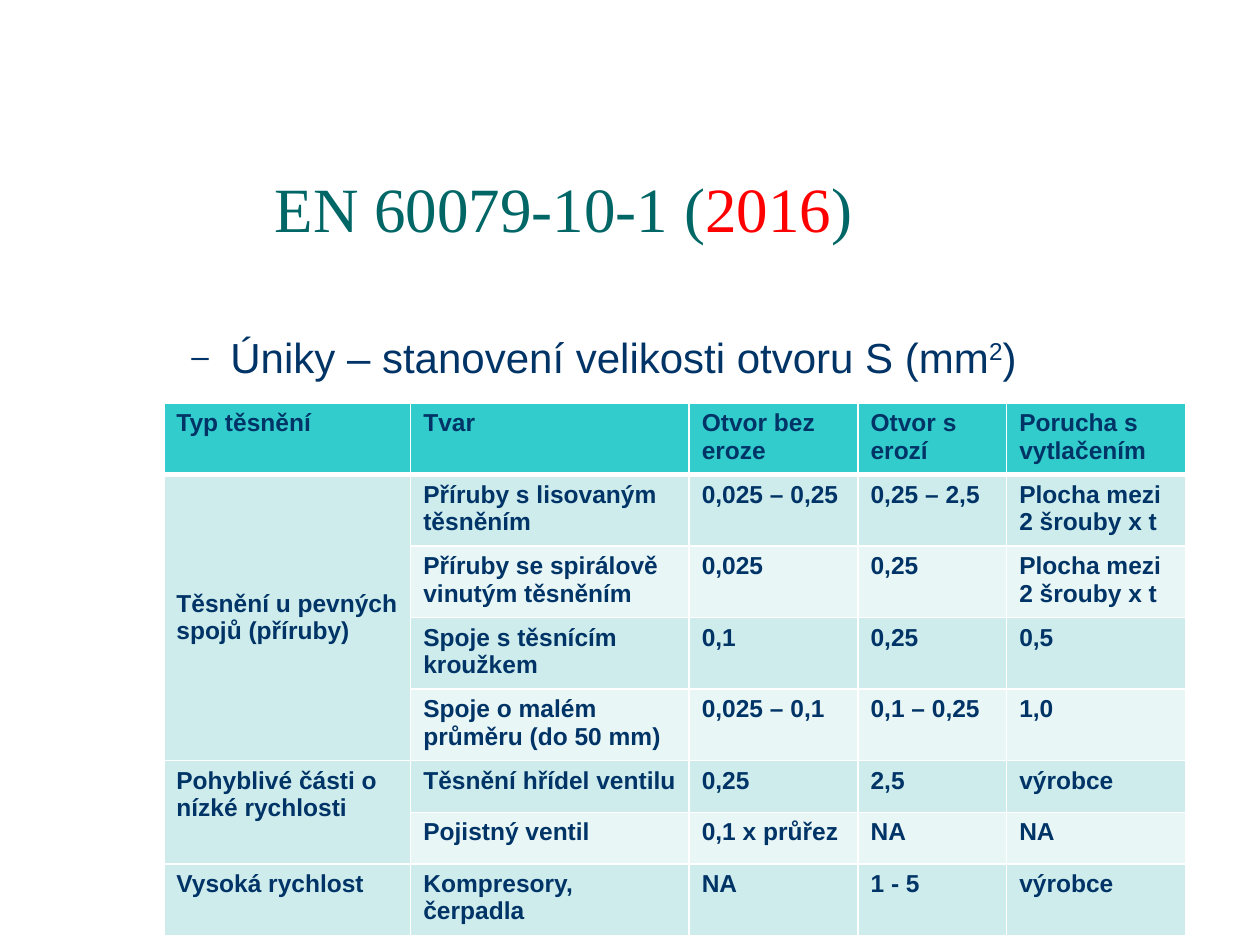
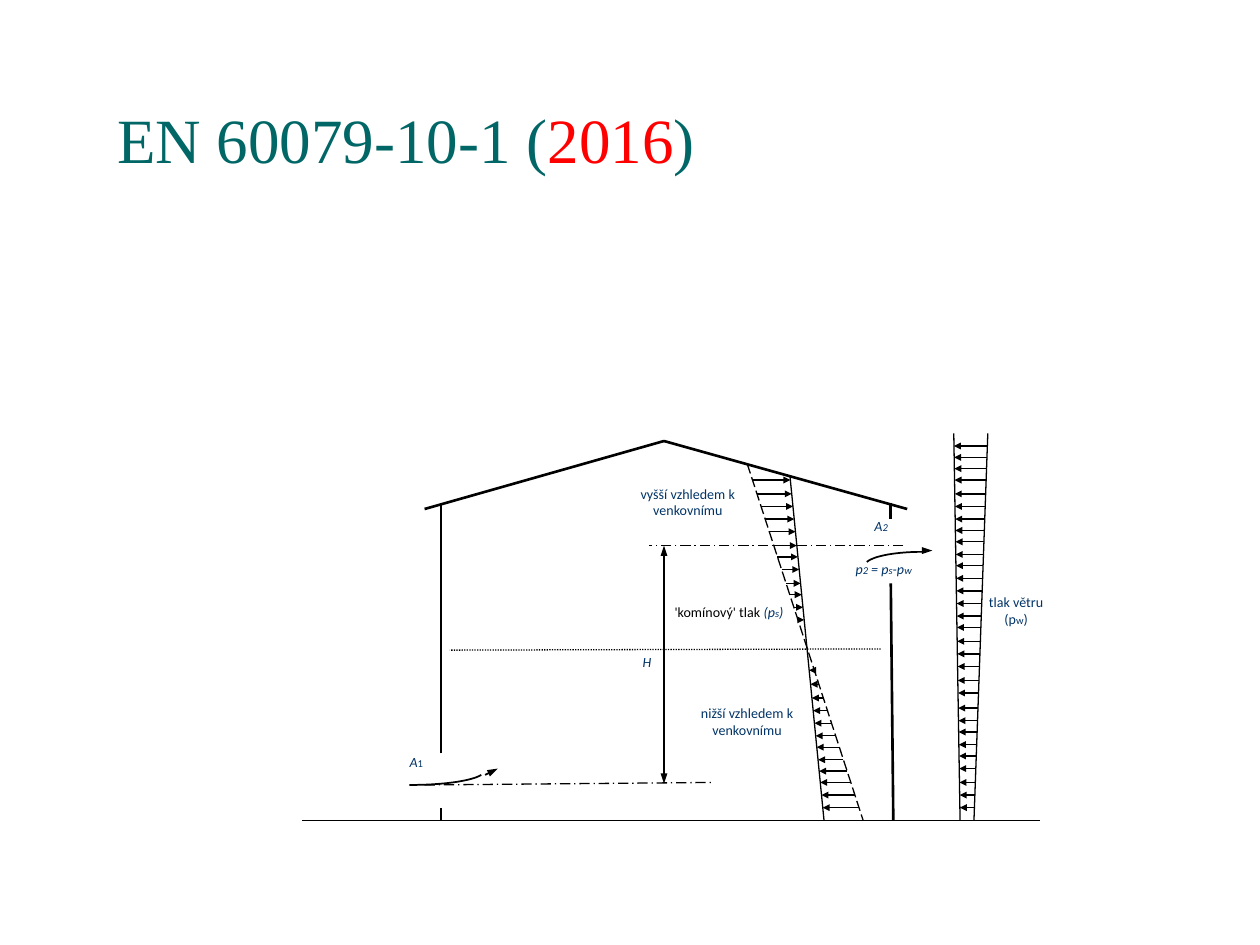
from dataclasses import dataclass
from typing import NamedTuple

from lxml import etree
from pptx import Presentation
from pptx.dml.color import RGBColor
from pptx.enum import dml, shapes, text
from pptx.oxml import ns
from pptx.util import Inches, Pt

TEAL = RGBColor(0x00, 0x66, 0x66)
RED = RGBColor(0xFF, 0x00, 0x00)
NAVY = RGBColor(0x00, 0x33, 0x66)
BLACK = RGBColor(0x00, 0x00, 0x00)
WHITE = RGBColor(0xFF, 0xFF, 0xFF)
HEADER_FILL = RGBColor(0x33, 0xCC, 0xCC)
BAND_FILLS = (RGBColor(0xCE, 0xEC, 0xEC), RGBColor(0xE8, 0xF6, 0xF6))

TITLE_FONT, BODY_FONT, LABEL_FONT = "Times New Roman", "Arial", "Calibri"
LABEL_SIZE, SUBSCRIPT_SIZE, CELL_SIZE = 8, 6, 14
THIN, CURVED, WALL = 0.75, 1, 1.5
LONG_DASH = dml.MSO_LINE.LONG_DASH
DASH_DOT = dml.MSO_LINE.LONG_DASH_DOT
DOTTED = dml.MSO_LINE.ROUND_DOT
CENTER = text.PP_ALIGN.CENTER
LEFT = text.PP_ALIGN.LEFT


class Point(NamedTuple):
    x: float
    y: float


class Box(NamedTuple):
    left: float
    top: float
    width: float
    height: float

    def inches(self) -> list:
        return [Inches(length) for length in self]


class Span(NamedTuple):
    content: str
    size: float | None = None
    color: RGBColor | None = None
    italic: bool | None = None


@dataclass
class Line:
    start: Point
    end: Point
    width: float = THIN
    dash: dml.MSO_LINE | None = None
    start_arrow: bool = False
    end_arrow: bool = False
    head_length: str = "med"

    def at_height(self, y: float) -> Point:
        share = (y - self.start.y) / (self.end.y - self.start.y)
        return Point(self.start.x + share * (self.end.x - self.start.x), y)


@dataclass
class Label:
    box: Box
    spans: list[Span]
    color: RGBColor = NAVY
    italic: bool = False
    alignment: text.PP_ALIGN = LEFT


def sub(content: str, italic: bool | None = None) -> Span:
    """A span in the small size of an index letter."""
    return Span(content, SUBSCRIPT_SIZE, italic=italic)


TABLE_BOX = Box(1.3, 3.2, 8.11, 3.28)
COLUMN_WIDTHS = (1.96, 2.21, 1.34, 1.18, 1.42)
ROW_HEIGHT = 0.41
TABLE_ROWS = (
    ("Typ těsnění", "Tvar", "Otvor bez eroze", "Otvor s erozí", "Porucha s vytlačením"),
    ("Těsnění u pevných spojů (příruby)", "Příruby s lisovaným těsněním",
     "0,025 – 0,25", "0,25 – 2,5", "Plocha mezi 2 šrouby x t"),
    ("", "Příruby se spirálově vinutým těsněním", "0,025", "0,25", "Plocha mezi 2 šrouby x t"),
    ("", "Spoje s těsnícím kroužkem", "0,1", "0,25", "0,5"),
    ("", "Spoje o malém průměru (do 50 mm)", "0,025 – 0,1", "0,1 – 0,25", "1,0"),
    ("Pohyblivé části o nízké rychlosti", "Těsnění hřídel ventilu", "0,25", "2,5", "výrobce"),
    ("", "Pojistný ventil", "0,1 x průřez", "NA", "NA"),
    ("Vysoká rychlost", "Kompresory, čerpadla", "NA", "1 - 5", "výrobce"),
)
MERGED_ROWS = ((1, 4), (5, 6))

GROUND_Y = 6.51
RIDGE = Point(5.27, 3.5)
BUILDING = (
    Line(Point(2.4, GROUND_Y), Point(8.25, GROUND_Y)),
    Line(Point(3.5, 5.98), Point(3.5, 3.99), WALL),
    Line(Point(3.5, GROUND_Y), Point(3.5, 6.41), WALL),
    Line(Point(7.09, GROUND_Y), Point(7.07, 4.63), WALL),
    Line(Point(7.07, 3.99), Point(7.07, 4.12), WALL),
    Line(Point(3.37, 4.04), RIDGE, WALL),
    Line(RIDGE, Point(7.2, 4.04), WALL),
)
LEVELS = (
    Line(Point(7.17, 4.33), Point(5.15, 4.33), dash=DASH_DOT),
    Line(Point(3.37, 6.23), Point(5.67, 6.21), dash=DASH_DOT),
    Line(Point(6.99, 5.15), Point(3.57, 5.16), dash=DOTTED),
    Line(Point(5.27, 4.33), Point(5.27, 6.22), start_arrow=True, end_arrow=True),
)
OUTSIDE_PRESSURE = Line(Point(5.93, 3.68), Point(6.85, GROUND_Y), dash=LONG_DASH)
STACK_PRESSURE = Line(Point(6.27, 3.78), Point(6.54, GROUND_Y))
WIND_FRONT = Line(Point(7.57, 3.44), Point(7.62, GROUND_Y))
WIND_BACK = Line(Point(7.84, 3.44), Point(7.73, GROUND_Y))
STACK_HEIGHTS = (
    3.81, 3.92, 4.02, 4.12, 4.22, 4.33, 4.42, 4.52, 4.63, 4.72, 4.82, 4.92,
    5.32, 5.43, 5.54, 5.64, 5.74, 5.84, 5.93, 6.03, 6.12, 6.21, 6.31, 6.41,
)
WIND_HEIGHTS = (
    3.54, 3.63, 3.72, 3.81, 3.92, 4.02, 4.12, 4.21, 4.3, 4.4,
    4.49, 4.59, 4.69, 4.79, 4.89, 4.98, 5.09, 5.19, 5.29, 5.4,
    5.5, 5.62, 5.72, 5.81, 5.91, 6, 6.1, 6.21, 6.31, 6.41,
)
AIRFLOW_CURVES = (
    (Point(3.25, 6.23), Point(3.51, 6.23), Point(3.74, 6.2), Point(3.82, 6.15)),
    (Point(7.32, 4.38), Point(7.12, 4.38), Point(6.94, 4.41), Point(6.88, 4.46)),
)
AIRFLOW_TIPS = (
    Line(Point(3.85, 6.15), Point(3.95, 6.1), CURVED, end_arrow=True),
    Line(Point(7.32, 4.37), Point(7.4, 4.37), CURVED, end_arrow=True),
)
LABELS = (
    Label(Box(7.83, 4.71, 0.47, 0.51), [Span("tlak větru (p"), sub("w"), Span(")")],
          alignment=CENTER),
    Label(Box(5.1, 5.19, 0.13, 0.17), [Span("H")], italic=True),
    Label(Box(3.25, 5.98, 0.25, 0.2), [Span("A"), sub("1", False)], italic=True),
    Label(Box(6.94, 4.11, 0.15, 0.18), [Span("A"), sub("2")], italic=True),
    Label(Box(5.44, 5.59, 0.98, 0.32), [Span("nižší vzhledem k venkovnímu")], alignment=CENTER),
    Label(Box(4.94, 3.85, 1.04, 0.27), [Span("vyšší vzhledem k venkovnímu")], alignment=CENTER),
    Label(Box(5.29, 4.79, 0.99, 0.31),
          [Span("'komínový' tlak", color=BLACK, italic=False), Span(" (p"), sub("s"), Span(")")],
          italic=True, alignment=CENTER),
    Label(Box(6.79, 4.45, 0.76, 0.18),
          [Span("p"), sub("2"), Span(" = p"), sub("s"), Span("-p"), sub("w")], italic=True),
)


def set_font(font, name: str, size: float, color: RGBColor) -> None:
    font.name, font.size = name, Pt(size)
    font.color.rgb = color


def add_spans(paragraph, spans: list[Span]) -> None:
    for span in spans:
        run = paragraph.add_run()
        run.text = span.content
        if span.size:
            run.font.size = Pt(span.size)
        if span.color is not None:
            run.font.color.rgb = span.color
        if span.italic is not None:
            run.font.italic = span.italic


def add_titled_slide(presentation, box: Box):
    slide = presentation.slides.add_slide(presentation.slide_layouts[5])
    title = slide.shapes.title
    title.left, title.top, title.width, title.height = box.inches()
    geometry = etree.SubElement(title._element.spPr, ns.qn("a:prstGeom"), prst="roundRect")
    guides = etree.SubElement(geometry, ns.qn("a:avLst"))
    etree.SubElement(guides, ns.qn("a:gd"), name="adj", fmla="val 21700")
    frame = title.text_frame
    frame.auto_size = text.MSO_AUTO_SIZE.NONE
    frame.vertical_anchor = text.MSO_ANCHOR.BOTTOM
    paragraph = frame.paragraphs[0]
    paragraph.alignment, paragraph.line_spacing = LEFT, 0.9
    set_font(paragraph.font, TITLE_FONT, 36, TEAL)
    add_spans(paragraph, [Span("EN 60079-10-1 ("), Span("2016", color=RED), Span(")")])
    return slide


def add_bullet(paragraph, character: str) -> None:
    properties = paragraph._p.get_or_add_pPr()
    properties.set("marL", str(Inches(0.81)))
    properties.set("indent", str(Inches(-0.31)))
    color = etree.Element(ns.qn("a:buClr"))
    etree.SubElement(color, ns.qn("a:srgbClr"), val=str(NAVY))
    size = etree.Element(ns.qn("a:buSzPct"), val="75000")
    font = etree.Element(ns.qn("a:buFont"), typeface=BODY_FONT)
    bullet = etree.Element(ns.qn("a:buChar"), char=character)
    spacing = properties.find(ns.qn("a:spcBef"))
    for element in (bullet, font, size, color):
        spacing.addnext(element)


def set_end_size(paragraph, size: float) -> None:
    """Keep the paragraph mark from making the last line taller."""
    etree.SubElement(paragraph._p, ns.qn("a:endParaRPr"), sz=str(size * 100))


def add_leak_heading(slide) -> None:
    frame = slide.shapes.add_textbox(*Box(0.92, 2.58, 8.41, 0.6).inches()).text_frame
    frame.word_wrap = True
    paragraph = frame.paragraphs[0]
    paragraph.space_before = Pt(4.8)
    set_font(paragraph.font, BODY_FONT, 24, NAVY)
    add_bullet(paragraph, "–")
    add_spans(paragraph, [Span("Úniky – stanovení velikosti otvoru S (mm"), Span("2"), Span(")")])
    paragraph.runs[1]._r.get_or_add_rPr().set("baseline", "30000")
    set_end_size(paragraph, 24)


def add_border(cell, tag: str, width: float) -> None:
    border = etree.Element(ns.qn(tag), w=str(Pt(width)))
    fill = etree.SubElement(border, ns.qn("a:solidFill"))
    etree.SubElement(fill, ns.qn("a:srgbClr"), val=str(WHITE))
    cell._tc.get_or_add_tcPr().insert(0, border)


def add_leak_table(slide) -> None:
    frame = slide.shapes.add_table(len(TABLE_ROWS), len(COLUMN_WIDTHS), *TABLE_BOX.inches())
    table = frame.table
    for column, width in zip(table.columns, COLUMN_WIDTHS):
        column.width = Inches(width)
    for row_index, values in enumerate(TABLE_ROWS):
        table.rows[row_index].height = Inches(ROW_HEIGHT)
        for column_index, value in enumerate(values):
            cell = table.cell(row_index, column_index)
            cell.fill.solid()
            cell.fill.fore_color.rgb = BAND_FILLS[(row_index - 1) % 2] if row_index else HEADER_FILL
            if row_index == 0:
                add_border(cell, "a:lnB", 3)
            paragraph = cell.text_frame.paragraphs[0]
            if value:
                font = paragraph.add_run().font
                paragraph.runs[0].text = value
                set_font(font, BODY_FONT, CELL_SIZE, NAVY)
                font.bold = True
            set_end_size(paragraph, CELL_SIZE)
    for first, last in MERGED_ROWS:
        table.cell(first, 0).merge(table.cell(last, 0))
    table.cell(1, 0).vertical_anchor = text.MSO_ANCHOR.MIDDLE


def add_line(slide, line: Line) -> None:
    ends = [Inches(length) for length in (*line.start, *line.end)]
    connector = slide.shapes.add_connector(shapes.MSO_CONNECTOR.STRAIGHT, *ends)
    connector.line.width = Pt(line.width)
    connector.line.color.rgb = BLACK
    if line.dash is not None:
        connector.line.dash_style = line.dash
    properties = connector._element.spPr
    outline = properties.find(ns.qn("a:ln"))
    for tag, present in (("a:headEnd", line.start_arrow), ("a:tailEnd", line.end_arrow)):
        if present:
            etree.SubElement(outline, ns.qn(tag), type="triangle", w="sm", len=line.head_length)
    etree.SubElement(properties, ns.qn("a:effectLst"))


def add_pressure_arrows(slide, tails: Line, tips: Line, heights: tuple[float, ...]) -> None:
    """Level arrows from one slanted line to another."""
    for y in heights:
        add_line(slide, Line(tails.at_height(y), tips.at_height(y), end_arrow=True,
                             head_length="sm"))


def bezier_point(controls: tuple[Point, ...], share: float) -> tuple:
    rest = 1 - share
    weights = (rest ** 3, 3 * rest ** 2 * share, 3 * rest * share ** 2, share ** 3)
    return tuple(Inches(sum(w * c for w, c in zip(weights, axis))) for axis in zip(*controls))


def add_curve(slide, controls: tuple[Point, ...], segments: int = 16) -> None:
    points = [bezier_point(controls, index / segments) for index in range(segments + 1)]
    builder = slide.shapes.build_freeform(*points[0])
    builder.add_line_segments(points[1:], close=False)
    shape = builder.convert_to_shape()
    shape.shadow.inherit = False
    shape.fill.background()
    shape.line.color.rgb = BLACK
    shape.line.width = Pt(CURVED)


def add_label(slide, label: Label) -> None:
    frame = slide.shapes.add_textbox(*label.box.inches()).text_frame
    frame.word_wrap = True
    frame.margin_left = frame.margin_top = frame.margin_right = frame.margin_bottom = 0
    paragraph = frame.paragraphs[0]
    paragraph.alignment = label.alignment
    set_font(paragraph.font, LABEL_FONT, LABEL_SIZE, label.color)
    paragraph.font.italic = label.italic
    add_spans(paragraph, label.spans)


def main() -> None:
    presentation = Presentation()
    presentation.slide_width, presentation.slide_height = Inches(10), Inches(7.5)

    leak_slide = add_titled_slide(presentation, Box(2.08, 1.25, 5.83, 0.75))
    add_leak_heading(leak_slide)
    add_leak_table(leak_slide)

    wind_slide = add_titled_slide(presentation, Box(0.83, 0.83, 8.67, 0.63))
    pressures = (OUTSIDE_PRESSURE, STACK_PRESSURE, WIND_FRONT, WIND_BACK)
    for line in (*BUILDING, *LEVELS, *pressures, *AIRFLOW_TIPS):
        add_line(wind_slide, line)
    for controls in AIRFLOW_CURVES:
        add_curve(wind_slide, controls)
    add_pressure_arrows(wind_slide, OUTSIDE_PRESSURE, STACK_PRESSURE, STACK_HEIGHTS)
    add_pressure_arrows(wind_slide, WIND_BACK, WIND_FRONT, WIND_HEIGHTS)
    for label in LABELS:
        add_label(wind_slide, label)
    presentation.save("out.pptx")


if __name__ == "__main__":
    main()
